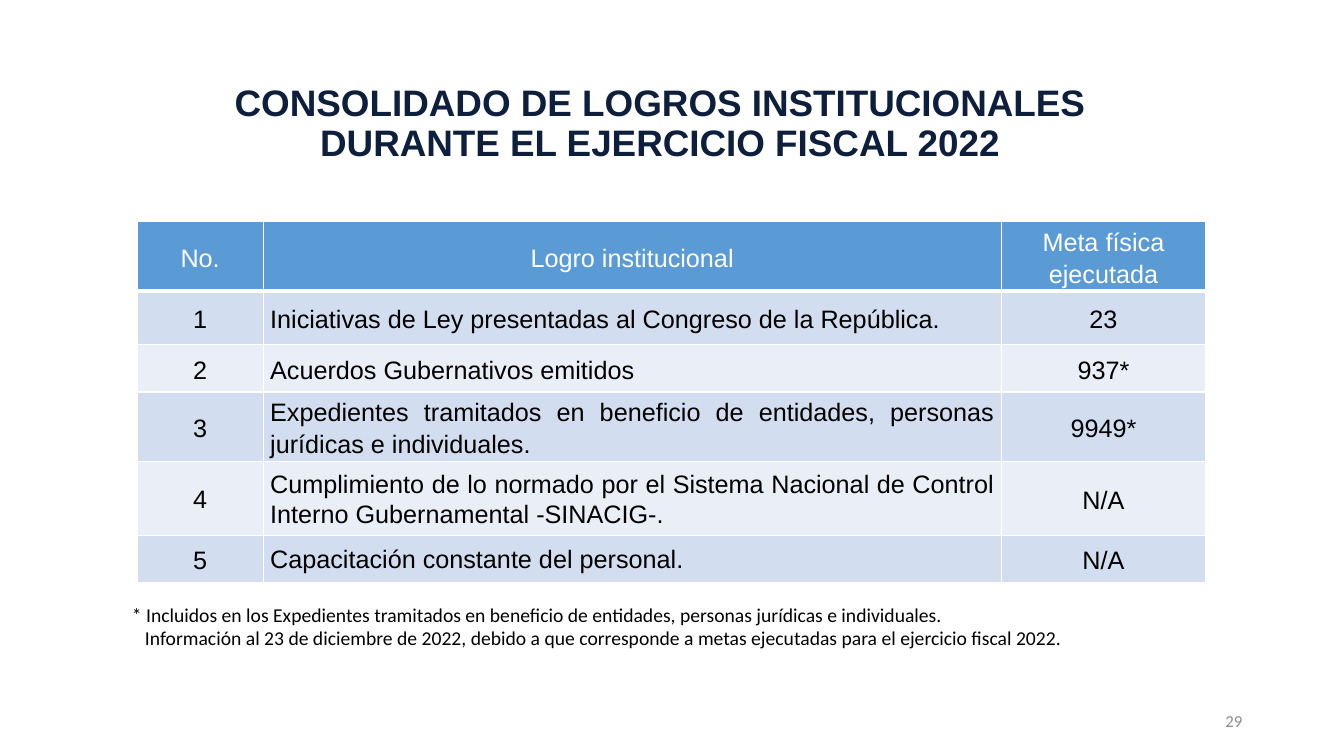
from pptx import Presentation
from pptx.util import Inches, Pt
from pptx.dml.color import RGBColor
from pptx.enum.text import PP_ALIGN, MSO_ANCHOR
from lxml import etree

CENTER, JUSTIFY = PP_ALIGN.CENTER, PP_ALIGN.JUSTIFY
LEFT, RIGHT = PP_ALIGN.LEFT, PP_ALIGN.RIGHT
TOP, MIDDLE = MSO_ANCHOR.TOP, MSO_ANCHOR.MIDDLE

NAVY = RGBColor(0x0D, 0x1F, 0x3C)
BLUE = RGBColor(0x5B, 0x9B, 0xD5)
BAND_DARK = RGBColor(0xD2, 0xDE, 0xEF)
BAND_LIGHT = RGBColor(0xEA, 0xEF, 0xF7)
WHITE = RGBColor(0xFF, 0xFF, 0xFF)
BLACK = RGBColor(0, 0, 0)
GRAY = RGBColor(0x8C, 0x8C, 0x8C)
DRAWING = "http://schemas.openxmlformats.org/drawingml/2006/main"

# Content
TITLE = "CONSOLIDADO DE LOGROS INSTITUCIONALES DURANTE EL EJERCICIO FISCAL 2022"
COLUMN_WIDTHS = [1.25, 7.32, 2.03]
# Each row: height, line spacing of its cells, cell texts
ROWS = [
    (0.53, (1.15, 1.15, 1.15), ("No.", "Logro institucional", "Meta física ejecutada")),
    (0.53, (1.15, 1.15, 1.15),
     ("1", "Iniciativas de Ley presentadas al Congreso de la República.", "23")),
    (0.47, (1.15, 1.15, 1.15), ("2", "Acuerdos Gubernativos emitidos", "937*")),
    (0.53, (1.15, 1.15, 1.15),
     ("3", "Expedientes tramitados en beneficio de entidades, personas "
           "jurídicas e individuales.", "9949*")),
    (0.73, (1.07, 1.07, 1.15),
     ("4", "Cumplimiento de lo normado por el Sistema Nacional de Control "
           "Interno Gubernamental -SINACIG-.", "N/A")),
    (0.47, (1.15, 1.07, 1.15), ("5", "Capacitación constante del personal.", "N/A")),
]
FOOTNOTES = [
    "* Incluidos en los Expedientes tramitados en beneficio de entidades, "
    "personas jurídicas e individuales.",
    "Información al 23 de diciembre de 2022, debido a que corresponde a metas "
    "ejecutadas para el ejercicio fiscal 2022.",
]
FOOTNOTE_INDENT = 0.13
PAGE_NUMBER = "29"


def write(para, text, size, font, color, align=LEFT, bold=False, spacing=None):
    para.alignment = align
    if spacing:
        para.line_spacing = spacing
    span = para.add_run()
    span.text = text
    span.font.size = Pt(size)
    span.font.name = font
    span.font.bold = bold
    span.font.color.rgb = color


def add_box(page, left, top, width, height, anchor=TOP):
    box = page.shapes.add_textbox(Inches(left), Inches(top), Inches(width), Inches(height))
    frame = box.text_frame
    frame.word_wrap = True
    frame.vertical_anchor = anchor
    return frame


def add_borders(cell, bottom_width):
    properties = cell._tc.get_or_add_tcPr()
    for side, width in (("L", 1), ("R", 1), ("T", 1), ("B", bottom_width)):
        line = etree.SubElement(properties, f"{{{DRAWING}}}ln{side}", w=str(Pt(width)))
        fill = etree.SubElement(line, f"{{{DRAWING}}}solidFill")
        etree.SubElement(fill, f"{{{DRAWING}}}srgbClr", val=str(WHITE))


def add_goals_table(page):
    heights = [row[0] for row in ROWS]
    table = page.shapes.add_table(
        len(ROWS), len(COLUMN_WIDTHS), Inches(1.36), Inches(2.2),
        Inches(sum(COLUMN_WIDTHS)), Inches(sum(heights))).table
    for column, width in zip(table.columns, COLUMN_WIDTHS):
        column.width = Inches(width)
    for r, (height, spacings, texts) in enumerate(ROWS):
        table.rows[r].height = Inches(height)
        header = r == 0
        band = BLUE if header else (BAND_LIGHT, BAND_DARK)[r % 2]
        for c, (spacing, text) in enumerate(zip(spacings, texts)):
            cell = table.cell(r, c)
            add_borders(cell, 3 if header else 1)
            cell.fill.solid()
            cell.fill.fore_color.rgb = band
            cell.vertical_anchor = MIDDLE
            cell.margin_left = cell.margin_right = Inches(0.07)
            cell.margin_top = cell.margin_bottom = 0
            para = cell.text_frame.paragraphs[0]
            align = JUSTIFY if c == 1 and not header else CENTER
            write(para, text, 18, "Arial", WHITE if header else BLACK, align, spacing=spacing)
            if c == 2:
                para.space_after = Pt(10)


def main():
    deck = Presentation()
    deck.slide_width, deck.slide_height = Inches(13.33), Inches(7.5)
    page = deck.slides.add_slide(deck.slide_layouts[6])

    # Title
    title = add_box(page, 1.62, 0.67, 9.85, 1.14, MIDDLE)
    write(title.paragraphs[0], TITLE, 26.3, "Arial", NAVY, CENTER, True, 0.9)

    # Table of achievements
    add_goals_table(page)

    # Footnotes, the second aligned after the asterisk
    notes = add_box(page, 1.21, 5.93, 10.97, 0.57)
    first, second = notes.paragraphs[0], notes.add_paragraph()
    second._p.get_or_add_pPr().set("marL", str(Inches(FOOTNOTE_INDENT)))
    for para, text in zip((first, second), FOOTNOTES):
        write(para, text, 14, "Calibri", BLACK)

    # Page number
    number = add_box(page, 9.42, 6.95, 3, 0.4, MIDDLE)
    write(number.paragraphs[0], PAGE_NUMBER, 12, "Calibri", GRAY, RIGHT)

    deck.save("out.pptx")


if __name__ == "__main__":
    main()
